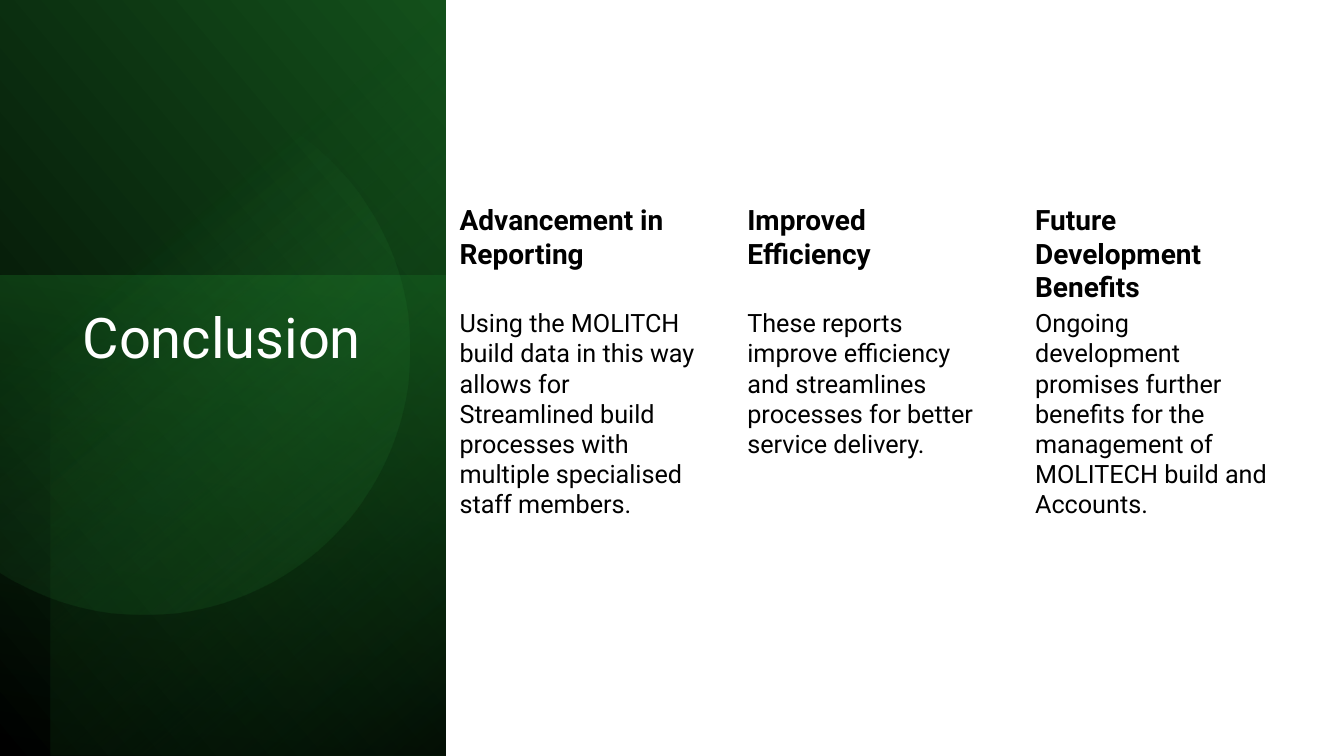
from lxml.etree import SubElement
from pptx import Presentation
from pptx.dml.color import RGBColor
from pptx.enum.shapes import MSO_SHAPE as Shape
from pptx.enum.text import MSO_ANCHOR as Anchor, PP_ALIGN as Align
from pptx.oxml.ns import qn
from pptx.util import Pt


def color(hex_text):
    return RGBColor.from_string(hex_text)


class SlideBuilder:
    font_name = "Roboto"

    def __init__(self, slide):
        self.slide = slide

    def gradient_shape(self, kind, left, top, width, height, stops, angle):
        """Add a shape with (position, color, opacity) stops; the angle runs clockwise."""
        shape = self.slide.shapes.add_shape(
            kind, Pt(left), Pt(top), Pt(width), Pt(height))
        shape.shadow.inherit = False
        shape.line.fill.background()
        fill = shape.fill
        fill.gradient()
        fill.gradient_angle = 360 - angle
        for stop, (position, hex_text, _) in zip(fill.gradient_stops, stops):
            stop.position = position / 100
            stop.color.rgb = color(hex_text)
        # Opacity has no public property
        for node, (_, _, opacity) in zip(shape._element.spPr.iter(qn("a:srgbClr")), stops):
            if opacity < 100:
                SubElement(node, qn("a:alpha")).set("val", str(opacity * 1000))
        return shape

    def rectangle(self, left, top, width, height, stops, angle):
        self.gradient_shape(Shape.RECTANGLE, left, top, width, height, stops, angle)

    def cut_circle(self, center_x, center_y, radius, half_angle, stops, angle):
        """Draw a circle whose left side is cut off by a vertical chord."""
        shape = self.gradient_shape(Shape.CHORD, center_x - radius, center_y - radius,
                                    2 * radius, 2 * radius, stops, angle)
        # Chord angles are stored in 60000ths of a degree, scaled by 100000
        shape.adjustments[0] = (360 - half_angle) * 0.6
        shape.adjustments[1] = half_angle * 0.6

    def text(self, left, top, width, height, words, size, hex_text="000000",
             bold=False, insets=(10.8, 2.16, 2.16, 2.16), line_spacing=1.0):
        box = self.slide.shapes.add_textbox(Pt(left), Pt(top), Pt(width), Pt(height))
        frame = box.text_frame
        frame.word_wrap = True
        frame.vertical_anchor = Anchor.TOP
        (frame.margin_left, frame.margin_top,
         frame.margin_right, frame.margin_bottom) = map(Pt, insets)
        paragraph = frame.paragraphs[0]
        paragraph.text = words
        paragraph.alignment = Align.LEFT
        paragraph.line_spacing = line_spacing
        font = paragraph.font
        font.name, font.size, font.bold = self.font_name, Pt(size), bold
        font.color.rgb = color(hex_text)


PANEL_WIDTH = 318.5
COLUMN_LEFT, COLUMN_PITCH, COLUMN_WIDTH = 317.5, 205.55, 187.2
HEADING_TOP, HEADING_HEIGHT, BODY_HEIGHT = 142.5, 74.9, 316

COLUMNS = [
    ("Advancement in Reporting",
     "Using the MOLITCH build data in this way allows for Streamlined build "
     "processes with multiple specialised staff members."),
    ("Improved Efficiency",
     "These reports improve efficiency and streamlines processes for better "
     "service delivery."),
    ("Future Development Benefits",
     "Ongoing development promises further benefits for the management of "
     "MOLITECH build and Accounts."),
]


def main():
    presentation = Presentation()
    presentation.slide_width, presentation.slide_height = Pt(960), Pt(540)
    builder = SlideBuilder(presentation.slides.add_slide(presentation.slide_layouts[6]))

    # Green panel: base, lower glow, corner shade and circle
    builder.rectangle(0, 0, PANEL_WIDTH, 540,
                      [(0, "000000", 100), (100, "13501B", 100)], 320)
    builder.rectangle(0, 196.7, PANEL_WIDTH, 343.3,
                      [(0, "196B24", 50), (100, "0D3612", 0)], 100)
    builder.rectangle(36, 0, PANEL_WIDTH - 36, 540,
                      [(0, "000000", 59), (69, "196B24", 0)], 230)
    builder.cut_circle(103, 249.8, 189.4, 122.95,
                       [(39, "47D45A", 0), (100, "13501B", 26)], 51.6)

    # Title
    builder.text(52, 218, 227, 242, "Conclusion", 40, "FFFFFF",
                 insets=(7.2, 3.6, 7.2, 3.6), line_spacing=0.9)

    # Three columns of heading and body
    for index, (heading, body) in enumerate(COLUMNS):
        left = COLUMN_LEFT + index * COLUMN_PITCH
        builder.text(left, HEADING_TOP, COLUMN_WIDTH, HEADING_HEIGHT,
                     heading, 20, bold=True)
        builder.text(left, HEADING_TOP + HEADING_HEIGHT, COLUMN_WIDTH, BODY_HEIGHT,
                     body, 18)

    presentation.save("out.pptx")


if __name__ == "__main__":
    main()
